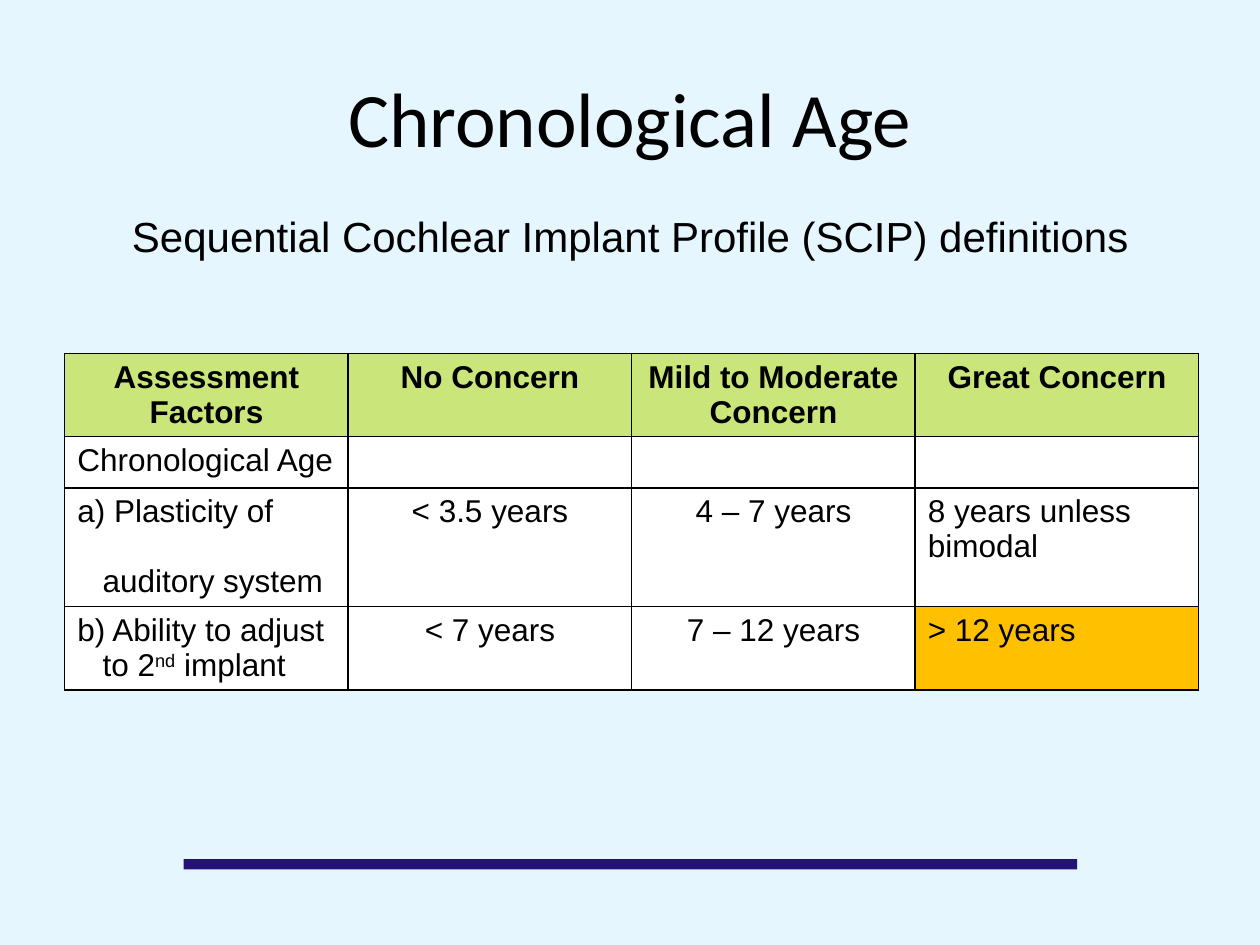
from pptx import Presentation
from pptx.dml.color import RGBColor
from pptx.enum.shapes import MSO_SHAPE as Shape
from pptx.enum.text import MSO_ANCHOR as Anchor, PP_ALIGN as Align
from pptx.oxml import parse_xml
from pptx.oxml.ns import nsdecls
from pptx.util import Pt

BLACK, WHITE, LIME, AMBER = "000000", "FFFFFF", "CAE67B", "FFC000"
HEAD = ["Assessment Factors", "No Concern", "Mild to Moderate Concern", "Great Concern"]
ROWS = [
    HEAD,
    ["Chronological Age", "", "", ""],
    ["a) Plasticity of\nauditory system", "< 3.5 years", "4 – 7 years", "8 years unless bimodal"],
    ["b) Ability to adjust to 2", "< 7 years", "7 – 12 years", "> 12 years"],
]
HIGHS = [47.5, 29, 68, 47.5]


def paint(fill, tone):
    """Fill with a solid colour."""
    fill.solid()
    fill.fore_color.rgb = RGBColor.from_string(tone)


def style(frame, face, size, align, bold=False):
    """Format all text in a frame."""
    for para in frame.paragraphs:
        para.alignment = align
        for run in para.runs:
            font = run.font
            font.name, font.size, font.bold = face, Pt(size), bold
            font.color.rgb = RGBColor.from_string(BLACK)


def place(shape, left, top, width, height):
    """Move and size a shape in points."""
    shape.left, shape.top = Pt(left), Pt(top)
    shape.width, shape.height = Pt(width), Pt(height)


def add_title(slide, text):
    """Fill the title placeholder."""
    title = slide.shapes.title
    place(title, 36, 21.6, 648, 90)
    frame = title.text_frame
    frame.text = text
    frame.vertical_anchor = Anchor.MIDDLE
    style(frame, "Calibri", 44, Align.CENTER)


def add_note(slide, text):
    """Add the centred line below the title."""
    box = slide.shapes.add_textbox(Pt(20), Pt(116.6), Pt(680.4), Pt(36))
    frame = box.text_frame
    frame.word_wrap = True
    frame.text = text
    style(frame, "Arial", 24, Align.CENTER)


def add_bar(slide, tone):
    """Add the rule at the foot."""
    bar = slide.shapes.add_shape(Shape.RECTANGLE, Pt(105), Pt(491), Pt(510.5), Pt(5.8))
    bar.shadow.inherit = False
    paint(bar.fill, tone)
    bar.line.fill.background()


def edge(cell):
    """Draw thin black borders around a cell."""
    props = cell._tc.get_or_add_tcPr()
    for spot, side in enumerate(("lnL", "lnR", "lnT", "lnB")):
        line = parse_xml(
            f'<a:{side} {nsdecls("a")} w="{Pt(1)}"><a:solidFill>'
            f'<a:srgbClr val="{BLACK}"/></a:solidFill></a:{side}>')
        props.insert(spot, line)


def hang(frame, first):
    """Set a hanging indent on the first line only."""
    for para in frame.paragraphs:
        props = para._p.get_or_add_pPr()
        props.set("marL", str(Pt(14.4)))
        props.set("indent", str(Pt(first)))
        first = 0


def add_grid(slide):
    """Add the table of concern levels."""
    grid = slide.shapes.add_table(
        len(ROWS), len(HEAD), Pt(37), Pt(202), Pt(648), Pt(sum(HIGHS))).table
    for r, (row, high) in enumerate(zip(ROWS, HIGHS)):
        grid.rows[r].height = Pt(high)
        for c, text in enumerate(row):
            cell = grid.cell(r, c)
            cell.text = text
            mid = r == 0 or c in (1, 2)
            style(cell.text_frame, "Arial", 18, Align.CENTER if mid else Align.LEFT, r == 0)
            paint(cell.fill, LIME if r == 0 else WHITE)
            edge(cell)
    paint(grid.cell(3, 3).fill, AMBER)
    split = grid.cell(2, 0).text_frame
    split.paragraphs[1].space_before = Pt(20)
    last = grid.cell(3, 0).text_frame
    para = last.paragraphs[0]
    for text in ("nd", " implant"):
        para.add_run().text = text
    style(last, "Arial", 18, Align.LEFT)
    para.runs[1]._r.get_or_add_rPr().set("baseline", "30000")
    for frame in (split, last):
        hang(frame, -14.4)


def main():
    """Build and save the slide."""
    deck = Presentation()
    deck.slide_width, deck.slide_height = Pt(720), Pt(540)
    slide = deck.slides.add_slide(deck.slide_layouts[5])
    paint(slide.background.fill, "E6F6FE")
    add_bar(slide, "251278")
    add_title(slide, "Chronological Age")
    add_grid(slide)
    add_note(slide, "Sequential Cochlear Implant Profile (SCIP) definitions")
    deck.save("out.pptx")


if __name__ == "__main__":
    main()
